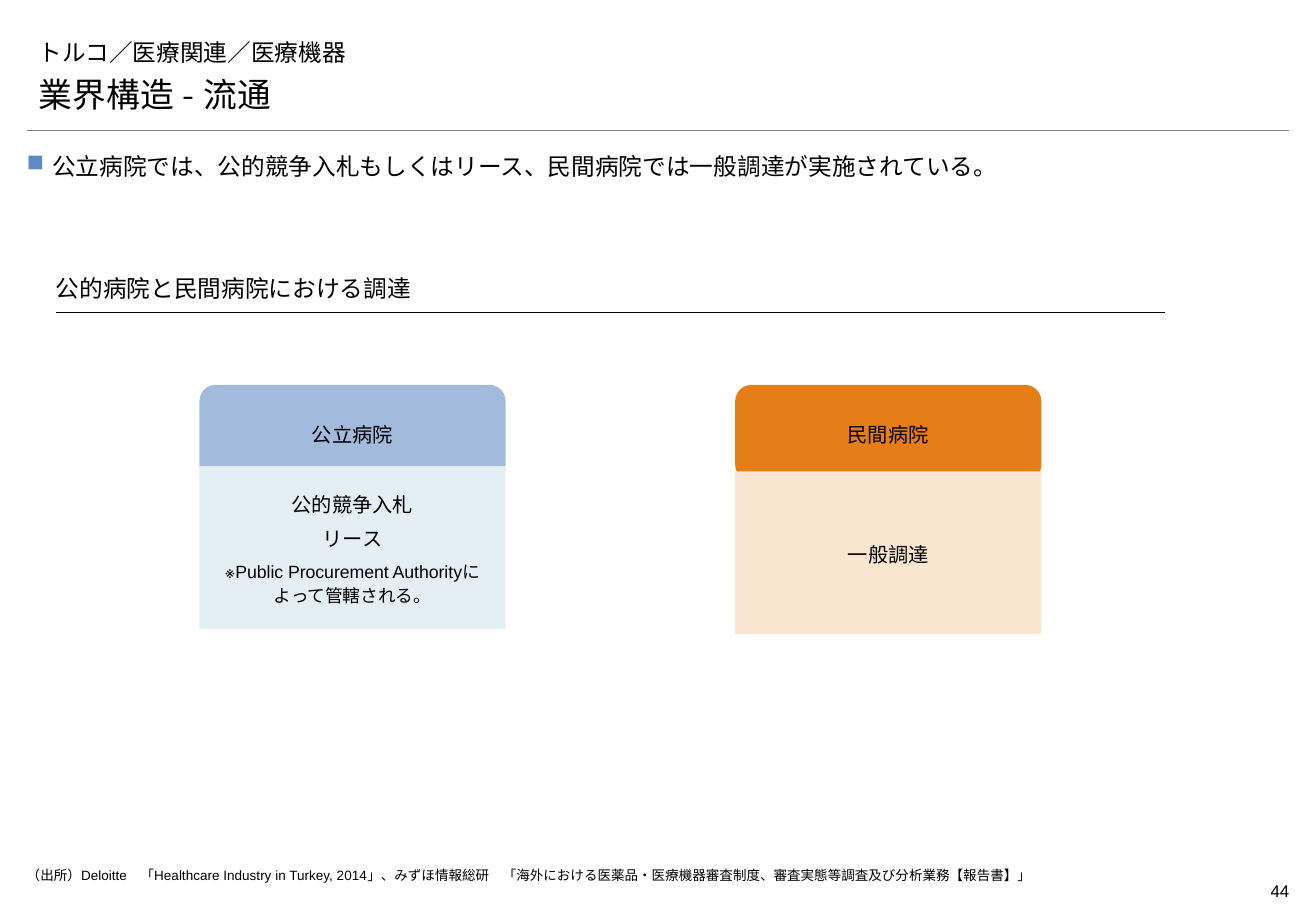
from lxml import etree
from pptx import Presentation
from pptx import util as u
from pptx.dml.color import RGBColor
from pptx.enum import shapes, text
from pptx.oxml.ns import qn

TITLE = "トルコ／医療関連／医療機器"
SUBTITLE = "業界構造 - 流通"
MESSAGE = "公立病院では、公的競争入札もしくはリース、民間病院では一般調達が実施されている。"
HEADING = "公的病院と民間病院における調達"
SOURCE = (
    "（出所）Deloitte　「Healthcare Industry in Turkey, 2014」、みずほ情報総研　"
    "「海外における医薬品・医療機器審査制度、審査実態等調査及び分析業務【報告書】」"
)
PAGE_NUMBER = "44"
HOSPITALS = [
    {"name": "公立病院", "head": "A2BBDC", "body": "E4EEF5", "body_top": 9.75,
     "methods": [("公的競争入札", "label"), ("リース", "label"),
                 ("※Public Procurement Authorityによって管轄される。", "note")]},
    {"name": "民間病院", "head": "E57E17", "body": "FAE5D0", "body_top": 9.86,
     "methods": [("一般調達", "label")]},
]

THEME = {
    "title_font": "Montserrat", "body_font": "Arial", "cjk_font": "Noto Sans CJK JP",
    "ink": "000000", "rule": "7F7F7F", "bullet": "5F8AC3",
    "sizes": {"subtitle": 20, "title": 14, "label": 12, "note": 10.5, "page": 10, "source": 8},
}
ALIGN = text.PP_ALIGN
ANCHOR = text.MSO_ANCHOR

SLIDE_WIDTH, SLIDE_HEIGHT = 27.51, 19.05
MARGIN = 0.56
CONTENT_WIDTH = SLIDE_WIDTH - 2 * MARGIN
HEADING_LEFT, HEADING_WIDTH, HEADING_BOTTOM = 1.17, 23.19, 6.53
CARD_LEFT, CARD_PITCH, CARD_WIDTH = 4.17, 11.2, 6.4
HEAD_TOP, HEAD_HEIGHT, BODY_HEIGHT = 8.05, 2.01, 3.4


def color(name):
    return RGBColor.from_string(THEME.get(name, name))


def set_font(paragraph, size, font):
    paragraph.font.size = u.Pt(THEME["sizes"][size])
    paragraph.font.name = font
    paragraph.font.color.rgb = color("ink")
    defaults = paragraph._p.pPr.find(qn("a:defRPr"))
    latin = defaults.find(qn("a:latin"))
    east_asian = etree.Element(qn("a:ea"), typeface=THEME["cjk_font"])
    latin.addnext(east_asian)


def set_indent(paragraph, width):
    properties = paragraph._p.get_or_add_pPr()
    properties.set("marL", str(u.Cm(width)))
    properties.set("indent", str(-u.Cm(width)))
    return properties


def add_text(slide, box, content, size, font, anchor=ANCHOR.TOP, align=ALIGN.LEFT,
             insets=(0, 0, 0, 0)):
    frame = slide.shapes.add_textbox(*map(u.Cm, box)).text_frame
    frame.word_wrap = True
    frame.vertical_anchor = anchor
    frame.margin_left, frame.margin_top, frame.margin_right, frame.margin_bottom = map(u.Cm, insets)
    paragraph = frame.paragraphs[0]
    paragraph.text = content
    paragraph.alignment = align
    return paragraph, lambda: set_font(paragraph, size, font)


def add_rule(slide, left, top, width, ink, weight):
    rule = slide.shapes.add_connector(
        shapes.MSO_CONNECTOR.STRAIGHT, u.Cm(left), u.Cm(top), u.Cm(left + width), u.Cm(top))
    rule.line.color.rgb = color(ink)
    rule.line.width = u.Pt(weight)
    etree.SubElement(rule._element.spPr, qn("a:effectLst"))


def add_block(slide, kind, left, top, height, fill, lines, font):
    block = slide.shapes.add_shape(kind, *map(u.Cm, (left, top, CARD_WIDTH, height)))
    block.shadow.inherit = False
    block.fill.solid()
    block.fill.fore_color.rgb = color(fill)
    block.line.fill.background()
    frame = block.text_frame
    frame.word_wrap = True
    frame.vertical_anchor = ANCHOR.MIDDLE
    for index, (content, size) in enumerate(lines):
        paragraph = frame.add_paragraph() if index else frame.paragraphs[0]
        paragraph.text = content
        paragraph.alignment = ALIGN.CENTER
        paragraph.line_spacing = 1.14
        paragraph.space_after = u.Pt(4)
        set_font(paragraph, size, font)


def add_header(slide):
    add_rule(slide, MARGIN, 2.72, CONTENT_WIDTH, "rule", 0.25)
    for content, top, size in ((TITLE, 0.53, "title"), (SUBTITLE, 1.52, "subtitle")):
        _, finish = add_text(slide, (MARGIN, top, CONTENT_WIDTH, 0.99), content, size,
                             THEME["title_font"], ANCHOR.BOTTOM, insets=(0.25, 0.13, 0.25, 0.13))
        finish()


def add_message(slide):
    paragraph, finish = add_text(slide, (MARGIN, 3.12, CONTENT_WIDTH, 0.66), MESSAGE, "title",
                                 THEME["body_font"], align=ALIGN.JUSTIFY)
    paragraph.line_spacing = 1.1
    paragraph.space_after = u.Pt(2)
    properties = set_indent(paragraph, 0.53)
    bullet_color = etree.SubElement(properties, qn("a:buClr"))
    etree.SubElement(bullet_color, qn("a:srgbClr"), val=THEME["bullet"])
    etree.SubElement(properties, qn("a:buChar"), char="■")
    finish()


def add_heading(slide):
    add_rule(slide, HEADING_LEFT, HEADING_BOTTOM, HEADING_WIDTH, "ink", 0.75)
    _, finish = add_text(slide, (HEADING_LEFT, HEADING_BOTTOM - 0.8, HEADING_WIDTH, 0.8), HEADING,
                         "title", THEME["title_font"], ANCHOR.BOTTOM, insets=(0, 0.13, 0, 0.2))
    finish()


def add_cards(slide):
    kinds = shapes.MSO_SHAPE
    for index, hospital in enumerate(HOSPITALS):
        left = CARD_LEFT + index * CARD_PITCH
        add_block(slide, kinds.ROUNDED_RECTANGLE, left, HEAD_TOP, HEAD_HEIGHT, hospital["head"],
                  [(hospital["name"], "label")], THEME["cjk_font"])
        add_block(slide, kinds.RECTANGLE, left, hospital["body_top"], BODY_HEIGHT,
                  hospital["body"], hospital["methods"], THEME["body_font"])


def add_footer(slide):
    paragraph, finish = add_text(slide, (MARGIN, 18.14, 24.41, 0.41), SOURCE, "source",
                                 THEME["body_font"])
    set_indent(paragraph, 0.99)
    finish()
    _, finish = add_text(slide, (24.95, 18.29, 2, 0.69), PAGE_NUMBER, "page",
                         THEME["body_font"], align=ALIGN.RIGHT, insets=(0, 0.13, 0, 0.13))
    finish()


def main():
    presentation = Presentation()
    presentation.slide_width = u.Cm(SLIDE_WIDTH)
    presentation.slide_height = u.Cm(SLIDE_HEIGHT)
    slide = presentation.slides.add_slide(presentation.slide_layouts[6])
    add_header(slide)
    add_message(slide)
    add_heading(slide)
    add_cards(slide)
    add_footer(slide)
    presentation.save("out.pptx")


if __name__ == "__main__":
    main()
